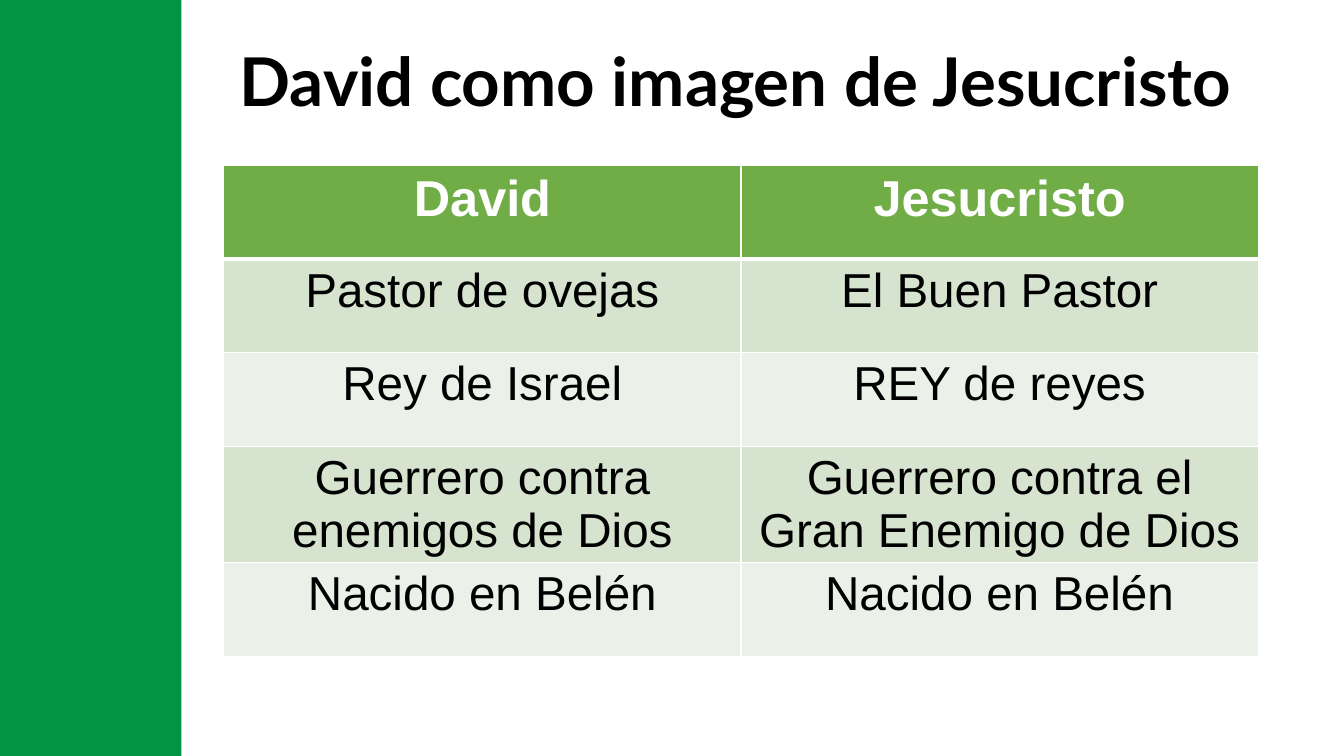
from dataclasses import dataclass

from lxml.etree import SubElement
from pptx import Presentation
from pptx.dml.color import RGBColor
from pptx.enum.shapes import MSO_SHAPE
from pptx.enum.text import MSO_ANCHOR, MSO_AUTO_SIZE, PP_ALIGN
from pptx.oxml.ns import qn
from pptx.util import Pt

PX = 9144


@dataclass(frozen=True)
class Theme:
    band: str = "009444"
    header: str = "70AD47"
    stripes: tuple = ("D5E3CF", "EBF1E9")
    ink: str = "000000"
    paper: str = "FFFFFF"
    title_font: str = "Lato"
    body_font: str = "Arial"
    title_size: int = 48
    header_size: int = 36
    body_size: int = 34
    rule: int = 1
    header_rule: int = 3


class SlideBuilder:
    def __init__(self, page, theme):
        self.page = page
        self.theme = theme

    def emu(self, *lengths):
        return [length * PX for length in lengths]

    def add_text(self, frame, text, color, **font_format):
        para = frame.paragraphs[0]
        para.alignment = PP_ALIGN.CENTER
        span = para.add_run()
        span.text = text
        for name, value in font_format.items():
            setattr(span.font, name, value)
        span.font.color.rgb = RGBColor.from_string(color)

    def band(self, *place):
        box = self.page.shapes.add_shape(MSO_SHAPE.RECTANGLE, *self.emu(*place))
        box.shadow.inherit = False
        box.fill.solid()
        box.fill.fore_color.rgb = RGBColor.from_string(self.theme.band)
        box.line.fill.background()

    def title(self, text, *place):
        box = self.page.shapes.add_textbox(*self.emu(*place))
        frame_format = {
            "word_wrap": True,
            "auto_size": MSO_AUTO_SIZE.NONE,
            "vertical_anchor": MSO_ANCHOR.TOP,
        }
        for name, value in frame_format.items():
            setattr(box.text_frame, name, value)
        theme = self.theme
        self.add_text(box.text_frame, text, theme.ink, name=theme.title_font,
                      size=Pt(theme.title_size), bold=True)

    def border(self, cell, widths):
        properties = cell._tc.get_or_add_tcPr()
        for position, (side, width) in enumerate(widths.items()):
            line = properties.makeelement(qn(f"a:{side}"), {"w": str(Pt(width))})
            fill = SubElement(line, qn("a:solidFill"))
            SubElement(fill, qn("a:srgbClr"), val=self.theme.paper)
            properties.insert(position, line)

    def cell(self, cell, text, row):
        theme = self.theme
        is_header = row == 0
        fill = theme.header if is_header else theme.stripes[(row - 1) % 2]
        cell.fill.solid()
        cell.fill.fore_color.rgb = RGBColor.from_string(fill)
        self.add_text(cell.text_frame, text, theme.paper if is_header else theme.ink,
                      name=theme.body_font, bold=is_header,
                      size=Pt(theme.header_size if is_header else theme.body_size))
        self.border(cell, {
            "lnL": theme.rule,
            "lnR": theme.rule,
            "lnT": theme.header_rule if row == 1 else theme.rule,
            "lnB": theme.header_rule if is_header else theme.rule,
        })

    def table(self, rows, left, top, column_width, row_height):
        columns = len(rows[0])
        place = self.emu(left, top, column_width * columns, row_height * len(rows))
        table = self.page.shapes.add_table(len(rows), columns, *place).table
        for row, texts in enumerate(rows):
            for column, text in enumerate(texts):
                self.cell(table.cell(row, column), text, row)


def main():
    deck = Presentation()
    deck.slide_width, deck.slide_height = 1333 * PX, 750 * PX
    page = deck.slides.add_slide(deck.slide_layouts[6])
    builder = SlideBuilder(page, Theme())
    builder.band(0, 0, 180, 750)
    builder.title("David como imagen de Jesucristo", 180, 34, 1099, 151)
    builder.table([
        ("David", "Jesucristo"),
        ("Pastor de ovejas", "El Buen Pastor"),
        ("Rey de Israel", "REY de reyes"),
        ("Guerrero contra enemigos de Dios", "Guerrero contra el Gran Enemigo de Dios"),
        ("Nacido en Belén", "Nacido en Belén"),
    ], left=222, top=164, column_width=513, row_height=93)
    deck.save("out.pptx")


if __name__ == "__main__":
    main()
